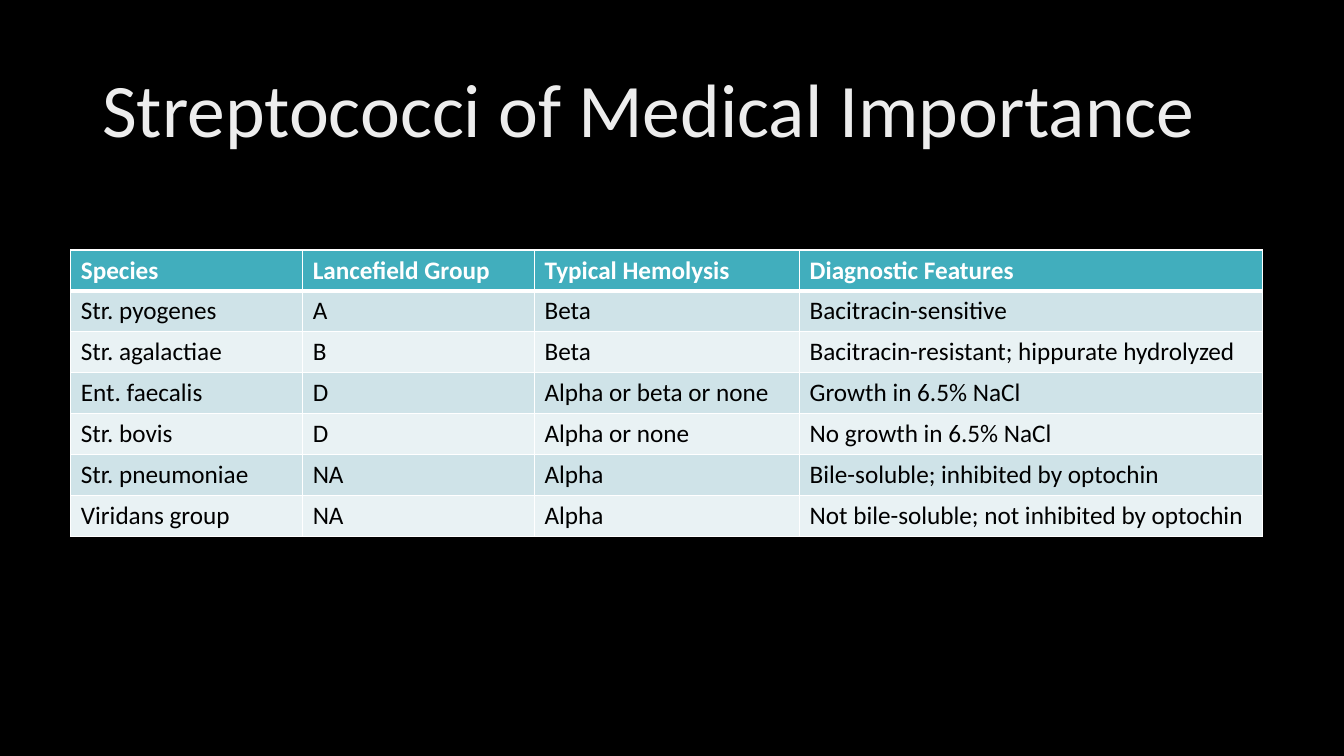
from dataclasses import dataclass

from lxml.etree import SubElement
from pptx import Presentation
from pptx.dml.color import RGBColor
from pptx.enum.text import MSO_ANCHOR
from pptx.oxml.ns import qn
from pptx.slide import Slide
from pptx.table import _Cell
from pptx.util import Pt

BLACK = RGBColor(0x00, 0x00, 0x00)
WHITE = RGBColor(0xFF, 0xFF, 0xFF)
TITLE_GREY = RGBColor(0xED, 0xED, 0xED)
TEAL = RGBColor(0x41, 0xAE, 0xBD)
BAND_DARK = RGBColor(0xCF, 0xE3, 0xE8)
BAND_LIGHT = RGBColor(0xE9, 0xF2, 0xF4)
FONT = "Calibri"

HEADINGS = ("Species", "Lancefield Group", "Typical Hemolysis", "Diagnostic Features")
COL_WIDTHS = (165.6, 165.6, 189.4, 330.8)
ROW_HEIGHT = 29.2


@dataclass(frozen=True)
class Species:
    name: str
    group: str
    hemolysis: str
    features: str


@dataclass(frozen=True)
class CellStyle:
    fill: RGBColor
    color: RGBColor
    bold: bool = False
    top: float = 1
    bottom: float = 1


SPECIES = (
    Species("Str. pyogenes", "A", "Beta", "Bacitracin-sensitive"),
    Species("Str. agalactiae", "B", "Beta", "Bacitracin-resistant; hippurate hydrolyzed"),
    Species("Ent. faecalis", "D", "Alpha or beta or none", "Growth in 6.5% NaCl"),
    Species("Str. bovis", "D", "Alpha or none", "No growth in 6.5% NaCl"),
    Species("Str. pneumoniae", "NA", "Alpha", "Bile-soluble; inhibited by optochin"),
    Species("Viridans group", "NA", "Alpha", "Not bile-soluble; not inhibited by optochin"),
)


def row_style(row: int) -> CellStyle:
    if row == 0:
        return CellStyle(TEAL, WHITE, bold=True, bottom=3)
    return CellStyle(BAND_DARK if row % 2 else BAND_LIGHT, BLACK, top=3 if row == 1 else 1)


def add_borders(cell: _Cell, style: CellStyle) -> None:
    tc_pr = cell._tc.get_or_add_tcPr()
    widths = {"lnL": 1, "lnR": 1, "lnT": style.top, "lnB": style.bottom}
    for tag, width in widths.items():
        ln = SubElement(tc_pr, qn(f"a:{tag}"), w=str(Pt(width)))
        fill = SubElement(ln, qn("a:solidFill"))
        SubElement(fill, qn("a:srgbClr"), val=str(WHITE))


def fill_cell(cell: _Cell, text: str, style: CellStyle) -> None:
    add_borders(cell, style)
    cell.fill.solid()
    cell.fill.fore_color.rgb = style.fill
    p = cell.text_frame.paragraphs[0]
    p.text = text
    p.font.name = FONT
    p.font.size = Pt(18)
    p.font.bold = style.bold
    p.font.color.rgb = style.color


def add_title(s: Slide, text: str) -> None:
    tf = s.shapes.add_textbox(Pt(66), Pt(28.8), Pt(828), Pt(104.4)).text_frame
    tf.word_wrap = True
    tf.vertical_anchor = MSO_ANCHOR.MIDDLE
    p = tf.paragraphs[0]
    p.text = text
    p.line_spacing = 0.9
    p.font.name = FONT
    p.font.size = Pt(54)
    p.font.color.rgb = TITLE_GREY


def add_species_table(s: Slide) -> None:
    rows = [HEADINGS] + [(sp.name, sp.group, sp.hemolysis, sp.features) for sp in SPECIES]
    table = s.shapes.add_table(
        len(rows), len(HEADINGS), Pt(50.6), Pt(178.6),
        Pt(sum(COL_WIDTHS)), Pt(ROW_HEIGHT * len(rows)),
    ).table
    for column, width in zip(table.columns, COL_WIDTHS):
        column.width = Pt(width)
    for i, texts in enumerate(rows):
        table.rows[i].height = Pt(ROW_HEIGHT)
        for j, text in enumerate(texts):
            fill_cell(table.cell(i, j), text, row_style(i))


def main() -> None:
    prs = Presentation()
    prs.slide_width, prs.slide_height = Pt(960), Pt(540)
    s = prs.slides.add_slide(prs.slide_layouts[6])
    s.background.fill.solid()
    s.background.fill.fore_color.rgb = BLACK
    add_title(s, "Streptococci of Medical Importance")
    add_species_table(s)
    prs.save("out.pptx")


if __name__ == "__main__":
    main()
